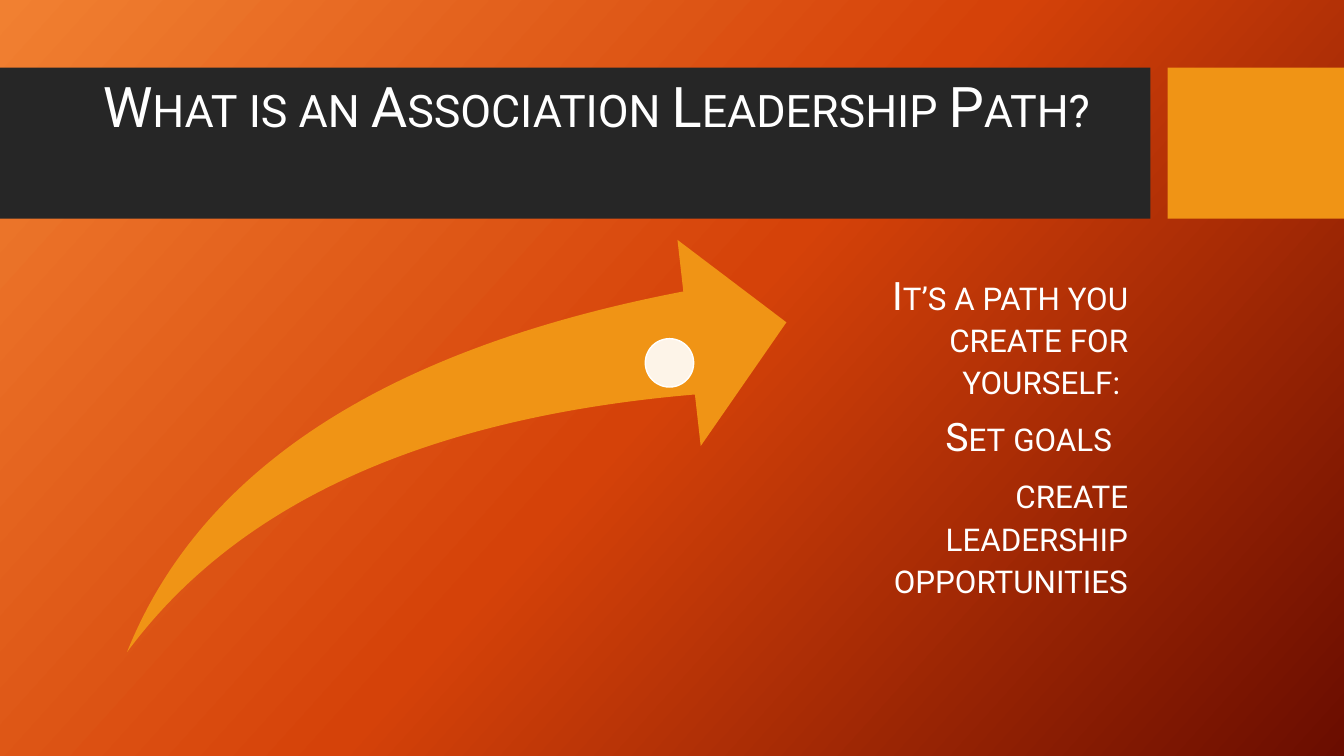
import copy

import pptx
import pptx.dml.color
import pptx.enum.shapes
import pptx.enum.text
import pptx.oxml
import pptx.oxml.ns
import pptx.util

Inches, Pt = pptx.util.Inches, pptx.util.Pt
RGBColor = pptx.dml.color.RGBColor
SHAPE = pptx.enum.shapes.MSO_SHAPE
ALIGN = pptx.enum.text.PP_ALIGN
ANCHOR = pptx.enum.text.MSO_ANCHOR
qn = pptx.oxml.ns.qn

WHITE = RGBColor(0xFF, 0xFF, 0xFF)
DARK = RGBColor(0x26, 0x26, 0x26)
AMBER = RGBColor(0xF0, 0x94, 0x15)
GLOW = [RGBColor(0xF1, 0x80, 0x31), RGBColor(0xD5, 0x42, 0x09),
        RGBColor(0x6A, 0x0D, 0x00)]


def style(item, values):
    for name, value in values.items():
        setattr(item, name, value)


def place(item, *box):
    names = ("left", "top", "width", "height")
    style(item, dict(zip(names, map(Inches, box))))


def paint(slide):
    """Give the slide an even three-colour gradient."""
    fill = slide.background.fill
    fill.gradient()
    fill.gradient_angle = 360 - 42
    stops = slide.element.find(".//" + qn("a:gsLst"))
    stops.append(copy.deepcopy(stops[0]))
    for i, (stop, color) in enumerate(zip(fill.gradient_stops, GLOW)):
        stop.position = i / (len(GLOW) - 1)
        stop.color.rgb = color


def add_form(slide, kind, color, *box):
    form = slide.shapes.add_shape(kind, *map(Inches, box))
    form.shadow.inherit = False
    form.fill.solid()
    form.fill.fore_color.rgb = color
    form.line.fill.background()
    return form


def add_dot(slide, *box):
    dot = add_form(slide, SHAPE.OVAL, WHITE, *box)
    tint = dot.fill._xPr.find(".//" + qn("a:srgbClr"))
    pptx.oxml.ns.nsdecls("a")
    alpha = tint.makeelement(qn("a:alpha"), {"val": "90000"})
    tint.append(alpha)
    dot.line.color.rgb = WHITE
    dot.line.width = Pt(1)


def write(para, text, size, **values):
    """Fill a paragraph with white small capitals."""
    style(para, {"line_spacing": 0.9, **values})
    run = para.add_run()
    run.text = text
    style(run.font, {"name": "Roboto", "size": Pt(size), "bold": False})
    run.font.color.rgb = WHITE
    run.font._element.set("cap", "small")


def add_title(slide, text):
    title = slide.shapes.title
    place(title, 0.92, 0.5, 10.51, 1.18)
    frame = title.text_frame
    style(frame, {"word_wrap": True, "vertical_anchor": ANCHOR.MIDDLE,
                  "auto_size": pptx.enum.text.MSO_AUTO_SIZE.NONE})
    write(frame.paragraphs[0], text, 40, alignment=ALIGN.LEFT)


def add_notes(slide, lines, *box):
    """Add right-aligned paragraphs, each with its own right indent."""
    frame = slide.shapes.add_textbox(*map(Inches, box)).text_frame
    style(frame, {"word_wrap": True, "vertical_anchor": ANCHOR.TOP,
                  "margin_left": 0, "margin_top": 0,
                  "margin_right": Inches(0.26), "margin_bottom": 0})
    for i, (text, indent) in enumerate(lines):
        para = frame.add_paragraph() if i else frame.paragraphs[0]
        para._p.get_or_add_pPr().set("marR", str(Inches(indent)))
        write(para, text, 28, alignment=ALIGN.RIGHT, space_after=Pt(10.5))


def main():
    deck = pptx.Presentation()
    style(deck, {"slide_width": Inches(13.33), "slide_height": Inches(7.5)})
    slide = deck.slides.add_slide(deck.slide_layouts[5])
    paint(slide)
    add_form(slide, SHAPE.RECTANGLE, DARK, 0, 0.67, 11.41, 1.5)
    add_form(slide, SHAPE.RECTANGLE, AMBER, 11.58, 0.67, 1.75, 1.5)
    add_title(slide, "What is an Association Leadership Path?")
    tree = slide.shapes._spTree
    tree.append(slide.shapes.title._element)
    arrow = add_form(slide, SHAPE.SWOOSH_ARROW, AMBER, 1.26, 2.38, 6.54, 4.09)
    for i in range(2):
        arrow.adjustments[i] = 0.25
    add_dot(slide, 6.4, 3.36, 0.48, 0.48)
    add_notes(slide, [("It’s a path you create for yourself: ", 0),
                      ("Set goals", 0.16),
                      ("create leadership opportunities", 0)],
              8.59, 2.74, 2.86, 2.72)
    deck.save("out.pptx")


if __name__ == "__main__":
    main()
